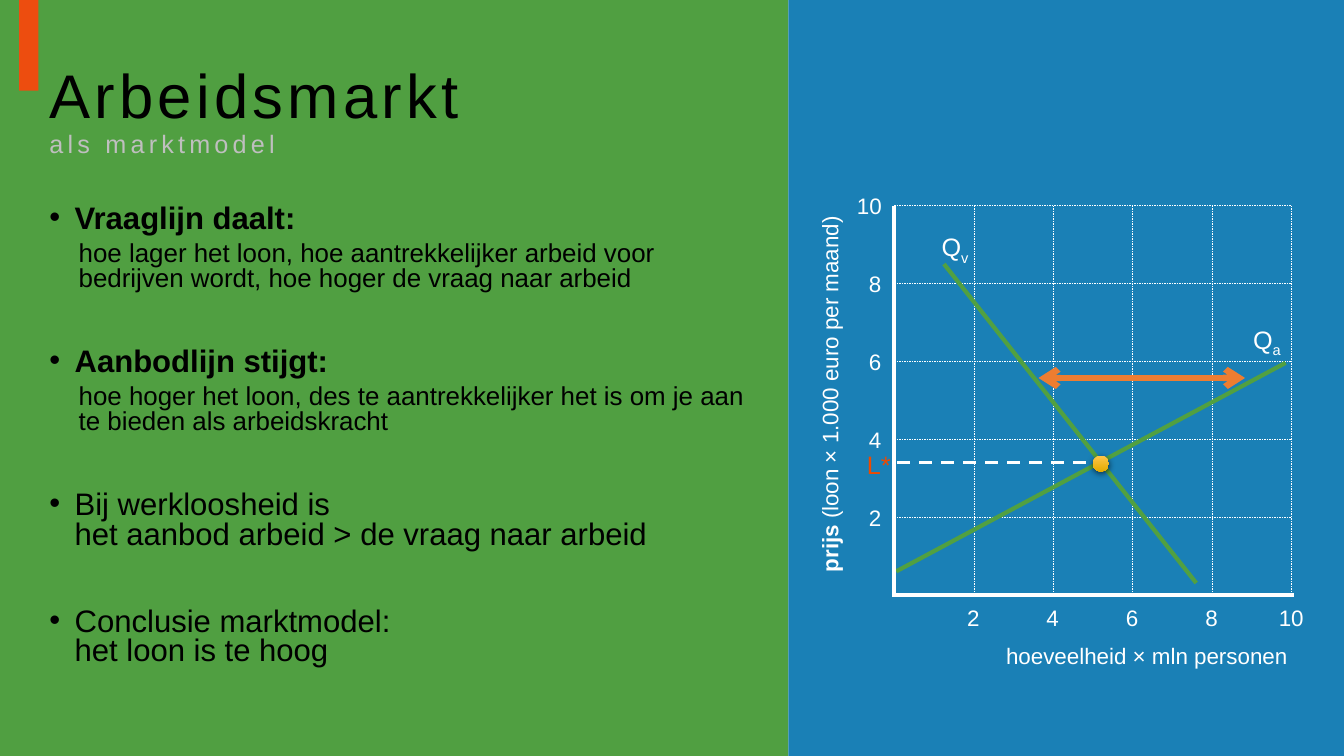
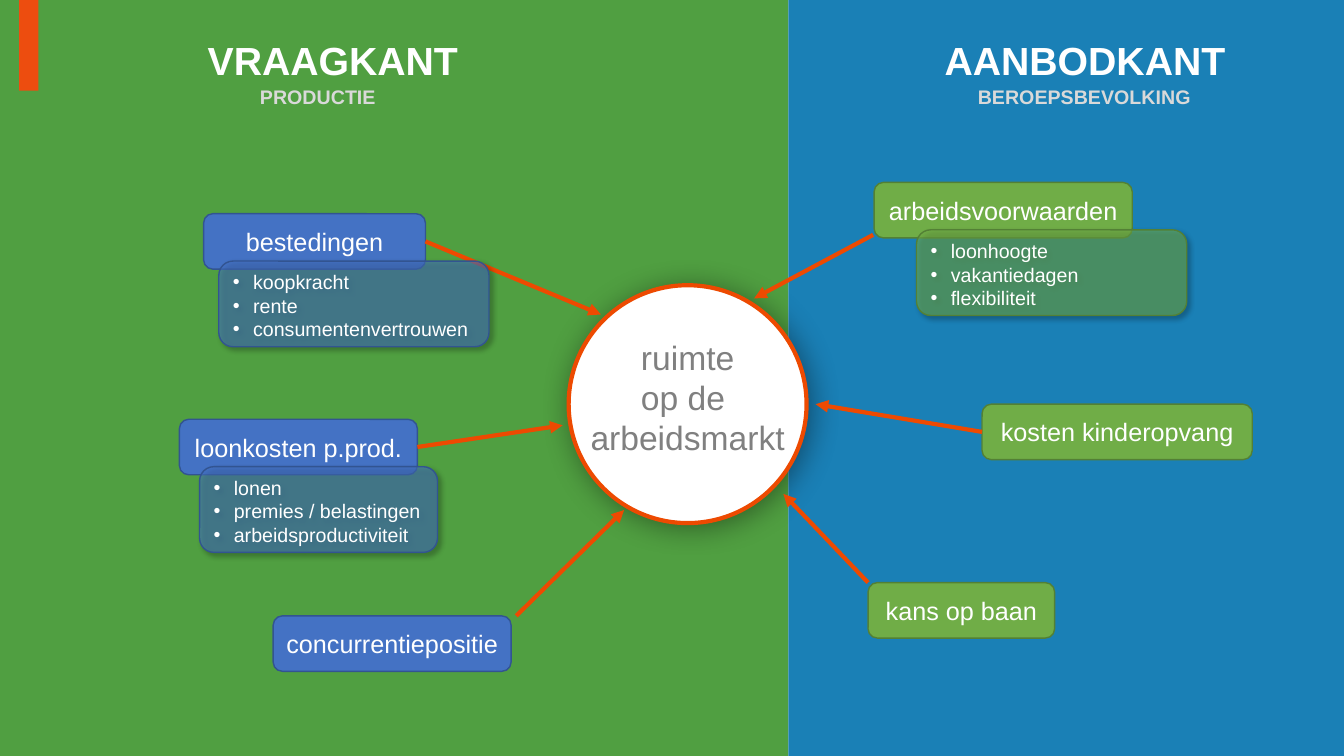
from lxml.etree import SubElement
from pptx import Presentation
from pptx.dml.color import RGBColor
from pptx.enum.dml import MSO_LINE
from pptx.enum.shapes import MSO_CONNECTOR, MSO_SHAPE
from pptx.enum.text import MSO_ANCHOR, MSO_AUTO_SIZE, PP_ALIGN
from pptx.oxml.ns import qn
from pptx.util import Inches, Pt

FONT = "Arial"
HUES = {
    "green": "258812", "blue": "1A80B6", "tab": "ED4D0F", "red": "ED4A01",
    "orange": "ED7D31", "curve": "51A041", "white": "FFFFFF", "black": "000000",
    "silver": "BFBFBF", "pale": "D9D9D9", "gray": "808080",
    "demand": "4472C4", "demand_edge": "325491",
    "supply": "70AD47", "supply_edge": "538035",
    "gold": "FFC64B", "amber": "E3AB00",
}


def tint(name):
    return RGBColor.from_string(HUES[name])


def put_run(para, text, size, color="white", bold=False):
    run = para.add_run()
    run.text = text
    run.font.name = FONT
    run.font.size = Pt(size)
    run.font.bold = bold
    run.font.color.rgb = tint(color)
    return run


def put_lines(para, lines, size, color):
    for i, line in enumerate(lines):
        if i:
            para.add_line_break()
        put_run(para, line, size, color)


def indent(para, left, hang, mark=None):
    props = para._p.get_or_add_pPr()
    props.set("marL", str(Inches(left)))
    props.set("indent", str(Inches(-hang)))
    if mark:
        SubElement(props, qn("a:buFont"), typeface=FONT)
        SubElement(props, qn("a:buChar"), char=mark)
    else:
        SubElement(props, qn("a:buNone"))


def fade(shape, percent):
    color = shape._element.spPr.find(qn("a:solidFill"))[0]
    SubElement(color, qn("a:alpha"), val=str(percent * 1000))


def shade(shape, alpha, blur, dist, angle):
    effects = shape._element.spPr.find(qn("a:effectLst"))
    outer = SubElement(effects, qn("a:outerShdw"), blurRad=str(Pt(blur)),
                       dist=str(Pt(dist)), dir=str(angle * 60000), rotWithShape="0")
    color = SubElement(outer, qn("a:srgbClr"), val=HUES["black"])
    SubElement(color, qn("a:alpha"), val=str(alpha * 1000))


def place(shape, box):
    shape.left, shape.top, shape.width, shape.height = map(Inches, box)


def put_shape(shapes, kind, box, fill, edge=None, width=1):
    shape = shapes.add_shape(kind, *map(Inches, box))
    shape.shadow.inherit = False
    shape.fill.solid()
    shape.fill.fore_color.rgb = tint(fill)
    if edge:
        shape.line.color.rgb = tint(edge)
        shape.line.width = Pt(width)
    else:
        shape.line.fill.background()
    return shape


def put_line(shapes, start, end, color, width, dash=None, head=None, tail=None):
    line = shapes.add_connector(MSO_CONNECTOR.STRAIGHT, *map(Inches, (*start, *end)))
    line.line.color.rgb = tint(color)
    line.line.width = Pt(width)
    if dash:
        line.line.dash_style = dash
    stroke = line.line._get_or_add_ln()
    for tag, tip in (("a:headEnd", head), ("a:tailEnd", tail)):
        if tip:
            SubElement(stroke, qn(tag), type=tip)
    SubElement(line._element.spPr, qn("a:effectLst"))
    return line


def put_text(shapes, box, align=PP_ALIGN.LEFT, wrap=False):
    shape = shapes.add_textbox(*map(Inches, box))
    shape.text_frame.word_wrap = wrap
    para = shape.text_frame.paragraphs[0]
    para.alignment = align
    return shape, para


def put_label(shapes, box, text, size=16, color="white", bold=False, align=PP_ALIGN.LEFT):
    shape, para = put_text(shapes, box, align)
    put_run(para, text, size, color, bold)
    return shape, para


def set_master(deck, slide):
    bands = (((0, -0.01, 7.82, 7.51), "green"),
             ((7.82, -0.01, 5.51, 7.51), "blue"),
             ((0.19, -0.25, 0.19, 1.15), "tab"))
    tree = deck.slide_master.shapes._spTree
    for i, (box, fill) in enumerate(bands):
        band = put_shape(slide.shapes, MSO_SHAPE.RECTANGLE, box, fill)
        if fill == "green":
            fade(band, 80)
        band._element.nvSpPr.cNvPr.set("id", str(101 + i))
        tree.insert(2 + i, band._element)


def set_title(slide, box, anchor, wrap=True):
    title = slide.shapes.title
    place(title, box)
    frame = title.text_frame
    frame.auto_size = MSO_AUTO_SIZE.NONE
    frame.word_wrap = wrap
    frame.vertical_anchor = anchor
    para = frame.paragraphs[0]
    para.alignment = PP_ALIGN.LEFT
    return para


def fill_body(slide, box, items):
    body = slide.placeholders[1]
    place(body, box)
    frame = body.text_frame
    frame.auto_size = MSO_AUTO_SIZE.NONE
    for i, (lines, detail) in enumerate(items):
        para = frame.add_paragraph() if i else frame.paragraphs[0]
        para.line_spacing = 0.8
        para.space_before = Pt(40.4 if i else 10)
        indent(para, 0.25, 0.25, "•")
        put_lines(para, lines, 22.2, "black")
        if detail:
            for run in para.runs:
                run.font.bold = True
            para = frame.add_paragraph()
            para.level = 1
            para.line_spacing = 0.8
            para.space_before = Pt(5)
            indent(para, 0.29, 0)
            put_run(para, detail, 18.5, "black")


def draw_graph(shapes, box):
    left, top, width, height = box
    base = top + height

    def spot(x, y):
        return left + x * width / 10, base - y * height / 10

    for v in range(10, 0, -2):
        put_line(shapes, spot(0, v), spot(10, v), "white", 0.25, MSO_LINE.DASH)
        put_line(shapes, spot(v, 0), spot(v, 10), "white", 0.25, MSO_LINE.DASH)
        wide = 0.45 if v == 10 else 0.33
        put_label(shapes, (left - 0.02 - wide, spot(0, v)[1] - 0.18, wide, 0.37), str(v))
        put_label(shapes, (spot(v, 0)[0] - wide / 2, base + 0.04, wide, 0.37), str(v))
    put_label(shapes, (left + 1.01, base + 0.42, 3.02, 0.37), "hoeveelheid × mln personen")
    axis, para = put_label(shapes, (left - 2.53, top + 1.66, 3.78, 0.37), "prijs", bold=True)
    put_run(para, " (loon × 1.000 euro per maand)", 16)
    axis.rotation = 270

    curves = (("v", (1.25, 8.5), (7.6, 0.3), (0.37, 0.21)),
              ("a", (0.05, 0.6), (9.85, 5.96), (3.46, 1.13)))
    for sub, start, end, (dx, dy) in curves:
        put_line(shapes, spot(*start), spot(*end), "curve", 3)
        para = put_label(shapes, (left + dx, top + dy, 0.48, 0.4), "Q", 18)[1]
        run = put_run(para, sub, 18)
        run.font._element.set("baseline", "-25000")

    put_line(shapes, spot(0.08, 3.39), spot(4.87, 3.39), "white", 2.25, MSO_LINE.DASH)
    x, y = spot(5.2, 3.37)
    dot = put_shape(shapes, MSO_SHAPE.OVAL, (x - 0.08, y - 0.08, 0.16, 0.16), "gold")
    dot.fill.gradient()
    dot.fill.gradient_angle = 270
    for stop, name in zip(dot.fill.gradient_stops, ("gold", "amber")):
        stop.color.rgb = tint(name)
    shade(dot, 63, 4.5, 1.5, 90)
    put_line(shapes, spot(0, 10), spot(0, 0), "white", 3)
    put_line(shapes, (left + width + 0.02, base), (left - 0.02, base), "white", 3)
    put_label(shapes, (left - 0.37, top + 2.37, 0.44, 0.4), "L*", 18, "red")
    put_line(shapes, spot(3.63, 5.57), spot(8.83, 5.57), "orange", 4.5,
             head="arrow", tail="arrow")


def draw_hub(shapes, box):
    left, top, width, height = box
    group = shapes.add_group_shape()
    disc = put_shape(group.shapes, MSO_SHAPE.OVAL, box, "white", "red", 3)
    shade(disc, 40, 22, 3, 45)
    area = (left + 0.09, top + 0.46, width - 0.18, 1.31)
    label, para = put_text(group.shapes, area, PP_ALIGN.CENTER, True)
    put_lines(para, ("ruimte", "op de "), 24, "gray")
    para = label.text_frame.add_paragraph()
    para.alignment = PP_ALIGN.CENTER
    put_run(para, "arbeidsmarkt", 24, "gray")


def draw_list(shapes, box, side, items):
    card = put_shape(shapes, MSO_SHAPE.ROUNDED_RECTANGLE, box, side, side + "_edge")
    fade(card, 58)
    shade(card, 40, 4, 3, 45)
    frame = card.text_frame
    frame.vertical_anchor = MSO_ANCHOR.TOP
    for i, item in enumerate(items):
        para = frame.add_paragraph() if i else frame.paragraphs[0]
        para.alignment = PP_ALIGN.LEFT
        indent(para, 0.2, 0.2, "•")
        put_run(para, item, 14)


def draw_cause(shapes, side, text, box, start, end, port=None, shift=None, items=()):
    left, top, width, height = box
    card = put_shape(shapes, MSO_SHAPE.ROUNDED_RECTANGLE, box, side, side + "_edge")
    card.text_frame.vertical_anchor = MSO_ANCHOR.MIDDLE
    card.text_frame.word_wrap = False
    para = card.text_frame.paragraphs[0]
    para.alignment = PP_ALIGN.CENTER
    put_run(para, text, 18)
    arrow = put_line(shapes, start, end, "red", 3, tail="triangle")
    if port is not None:
        arrow.begin_connect(card, port)
    if items:
        dx, wide = shift
        draw_list(shapes, (left + dx, top + 0.47, wide, 0.85), side, items)


def market_slide(slide):
    para = set_title(slide, (0.39, 0.39, 12.61, 1.45), MSO_ANCHOR.MIDDLE)
    para.line_spacing = 0.9
    put_run(para, "Arbeidsmarkt ", 44, "black")
    para.add_line_break()
    put_run(para, "als marktmodel", 18, "silver")
    for run in para.runs:
        run.font._element.set("spc", "300")
    fill_body(slide, (0.39, 1.99, 7.3, 5.07), (
        (("Vraaglijn daalt:",), "hoe lager het loon, hoe aantrekkelijker arbeid voor "
         "bedrijven wordt, hoe hoger de vraag naar arbeid"),
        (("Aanbodlijn stijgt:",), "hoe hoger het loon, des te aantrekkelijker het is "
         "om je aan te bieden als arbeidskracht"),
        (("Bij werkloosheid is ", "het aanbod arbeid > de vraag naar arbeid"), None),
        (("Conclusie marktmodel:", "het loon is te hoog"), None),
    ))
    draw_graph(slide.shapes, (8.87, 2.04, 3.94, 3.86))


def cause_slide(slide):
    shapes = slide.shapes
    draw_hub(shapes, (5.64, 2.83, 2.36, 2.36))
    para = set_title(slide, (1.96, 0.31, 2.71, 0.57), MSO_ANCHOR.TOP, False)
    put_run(para, "VRAAGKANT", 28, bold=True)
    put_label(shapes, (9.27, 0.31, 3.02, 0.57), "AANBODKANT", 28, bold=True)
    put_label(shapes, (2.48, 0.79, 1.36, 0.34), "PRODUCTIE", 14, "pale", True)
    put_label(shapes, (9.6, 0.79, 2.33, 0.34), "BEROEPSBEVOLKING", 14, "pale", True)
    causes = (
        ("demand", "bestedingen", (2.02, 2.12, 2.2, 0.55), (4.22, 2.4), (5.96, 3.12),
         3, (0.15, 2.68), ("koopkracht", "rente", "consumentenvertrouwen")),
        ("demand", "loonkosten p.prod.", (1.78, 4.16, 2.36, 0.55), (4.14, 4.44), (5.58, 4.22),
         3, (0.2, 2.36), ("lonen", "premies / belastingen", "arbeidsproductiviteit")),
        ("demand", "concurrentiepositie", (2.71, 6.11, 2.36, 0.55), (5.12, 6.11), (6.19, 5.06)),
        ("supply", "arbeidsvoorwaarden", (8.67, 1.81, 2.56, 0.55), (8.66, 2.33), (7.48, 2.96),
         None, (0.42, 2.68), ("loonhoogte", "vakantiedagen", "flexibiliteit")),
        ("supply", "kosten kinderopvang", (9.74, 4.01, 2.68, 0.55), (9.74, 4.29), (8.09, 4.01), 1),
        ("supply", "kans op baan", (8.61, 5.78, 1.85, 0.55), (8.61, 5.78), (7.77, 4.9)),
    )
    for cause in causes:
        draw_cause(shapes, *cause)


def main():
    deck = Presentation()
    deck.slide_width, deck.slide_height = Inches(13.33), Inches(7.5)
    first = deck.slides.add_slide(deck.slide_layouts[1])
    set_master(deck, first)
    market_slide(first)
    cause_slide(deck.slides.add_slide(deck.slide_layouts[5]))
    deck.save("out.pptx")


if __name__ == "__main__":
    main()
